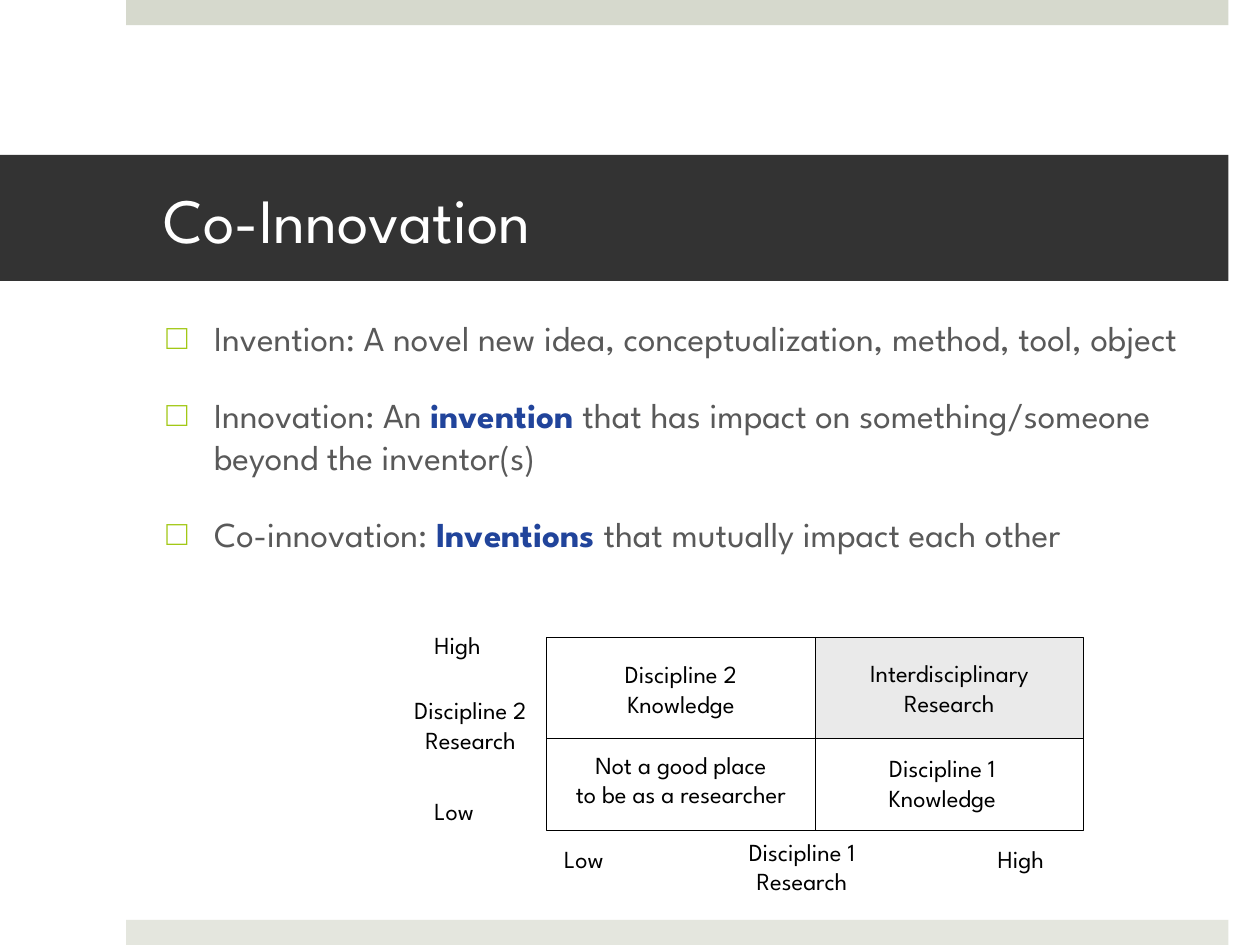
from lxml import etree
from pptx import Presentation
from pptx.dml.color import RGBColor
from pptx.enum.shapes import MSO_CONNECTOR, MSO_SHAPE
from pptx.enum.text import MSO_ANCHOR, MSO_AUTO_SIZE, PP_ALIGN
from pptx.oxml.ns import qn
from pptx.util import Inches, Pt

RECT = MSO_SHAPE.RECTANGLE
LINE = MSO_CONNECTOR.STRAIGHT
TOP, MID = MSO_ANCHOR.TOP, MSO_ANCHOR.MIDDLE
LEFT, MIDDLE = PP_ALIGN.LEFT, PP_ALIGN.CENTER
FIXED = MSO_AUTO_SIZE.NONE

FONT = "League Spartan"
COLORS = {
    "white": "FFFFFF", "black": "000000", "dark": "333333", "text": "595959",
    "blue": "21449B", "green": "A2C816", "sage": "D6D9CD", "pale": "E4E6DE",
    "gray": "EAEAEA",
}
COLS, ROWS = 100, 75


def rgb(name):
    return RGBColor.from_string(COLORS[name])


class Deck:
    def __init__(self):
        self.prs = Presentation()
        self.prs.slide_width, self.prs.slide_height = Inches(10), Inches(7.5)
        self.slide = self.prs.slides.add_slide(self.prs.slide_layouts[1])
        self.group = None

    def x(self, col):
        return round(self.prs.slide_width * col / COLS)

    def y(self, row):
        return round(self.prs.slide_height * row / ROWS)

    def box(self, col, row, wide, high):
        return self.x(col), self.y(row), self.x(wide), self.y(high)

    def place(self, shape, *area):
        shape.left, shape.top, shape.width, shape.height = self.box(*area)

    def style(self, font, size, color):
        font.name, font.size = FONT, Pt(size)
        font.color.rgb = rgb(color)

    def title(self, text, *area):
        shape = self.slide.shapes.title
        self.place(shape, *area)
        shape.fill.solid()
        shape.fill.fore_color.rgb = rgb("dark")
        frame = shape.text_frame
        frame.text = text
        frame.auto_size, frame.vertical_anchor = FIXED, MID
        frame.margin_left, frame.margin_right = self.x(13), self.x(3)
        para = frame.paragraphs[0]
        para.alignment = LEFT
        self.style(para.font, 36, "white")

    def bullets(self, items, *area):
        shape = self.slide.placeholders[1]
        self.place(shape, *area)
        frame = shape.text_frame
        frame.auto_size = FIXED
        for i, parts in enumerate(items):
            para = frame.paragraphs[0] if i == 0 else frame.add_paragraph()
            para.space_before = Pt(20)
            self.style(para.font, 20, "text")
            for j, text in enumerate(parts):
                run = para.add_run()
                run.text = text
                if j == 1:
                    run.font.bold = True
                    run.font.color.rgb = rgb("blue")
            self.mark(para)

    def mark(self, para):
        props = para._p.get_or_add_pPr()
        props.set("marL", str(self.x(3.8)))
        props.set("indent", str(-self.x(3.8)))
        tint = etree.Element(qn("a:buClr"))
        etree.SubElement(tint, qn("a:srgbClr"), val=COLORS["green"])
        sign = etree.Element(qn("a:buChar"), char="□")
        end = props.find(qn("a:defRPr"))
        for node in (tint, sign):
            end.addprevious(node)

    def start(self):
        self.group = self.slide.shapes.add_group_shape()

    def rect(self, area, fill=None, line=None):
        home = self.group or self.slide
        shape = home.shapes.add_shape(RECT, *self.box(*area))
        shape.shadow.inherit = False
        if fill:
            shape.fill.solid()
            shape.fill.fore_color.rgb = rgb(fill)
        else:
            shape.fill.background()
        if line:
            shape.line.color.rgb = rgb(line)
            shape.line.width = Pt(0.75)
        else:
            shape.line.fill.background()
        return shape

    def words(self, shape, lines, align, anchor):
        frame = shape.text_frame
        frame.word_wrap, frame.vertical_anchor = True, anchor
        for i, text in enumerate(lines):
            para = frame.paragraphs[0] if i == 0 else frame.add_paragraph()
            para.text, para.alignment = text, align
            self.style(para.font, 14, "black")

    def label(self, lines, *area, align=MIDDLE, anchor=TOP):
        shape = self.group.shapes.add_textbox(*self.box(*area))
        self.words(shape, lines, align, anchor)

    def rule(self, col, row, far, low):
        line = self.group.shapes.add_connector(
            LINE, self.x(col), self.y(row), self.x(far), self.y(low))
        line.line.color.rgb = rgb("black")
        line.line.width = Pt(0.75)
        etree.SubElement(line._element.spPr, qn("a:effectLst"))
        return line


def main():
    deck = Deck()
    for row, fill in ((0, "sage"), (73, "pale")):
        deck.rect((10, row, 87.5, 2), fill)
    deck.title("Co-Innovation", 0, 12.3, 97.5, 10)
    deck.bullets([
        ["Invention: A novel new idea, conceptualization, method, tool, object"],
        ["Innovation: An ", "invention",
         " that has impact on something/someone beyond the inventor(s)"],
        ["Co-innovation: ", "Inventions", " that mutually impact each other"],
    ], 12.2, 24.6, 83.2, 28.6)

    deck.start()
    left, top, cell, high, split = 43.4, 50.6, 21.3, 15.3, 58.6
    mid, right, low = left + cell, left + 2 * cell, top + high

    deck.label(["Discipline 2", "Knowledge"],
               left, 51.3, cell, 6.7, anchor=MID)
    deck.label(["Not a good place", "to be as a researcher"],
               44.1, split + 0.2, 19.9, 6.1, anchor=MID)
    best = deck.rect((mid, top, cell, split - top), "gray")
    deck.words(best, ["Interdisciplinary", "Research"], MIDDLE, MID)
    deck.label(["Discipline 1", "Knowledge"], 66.8, 59.3, 16, 5.7)

    for name, col, row in (("Discipline 2", 31.1, 54.7),
                           ("Discipline 1", 57.4, low)):
        deck.label([name, "Research"], col, row, 12.5, 5.7)
    for name, col, row in (("Low", 33.5, 62.7), ("Low", 43.8, 66.5),
                           ("High", 33.5, 49.5), ("High", 78.2, 66.5)):
        deck.label([name], col, row, 8.3, 3.4, align=LEFT)

    frame = deck.rect((left, top, 2 * cell, high), line="black")
    deck.rule(left, split, right, split)
    post = deck.rule(mid, top, mid, low)
    post.begin_connect(frame, 0)
    post.end_connect(frame, 2)
    deck.prs.save("out.pptx")


if __name__ == "__main__":
    main()
